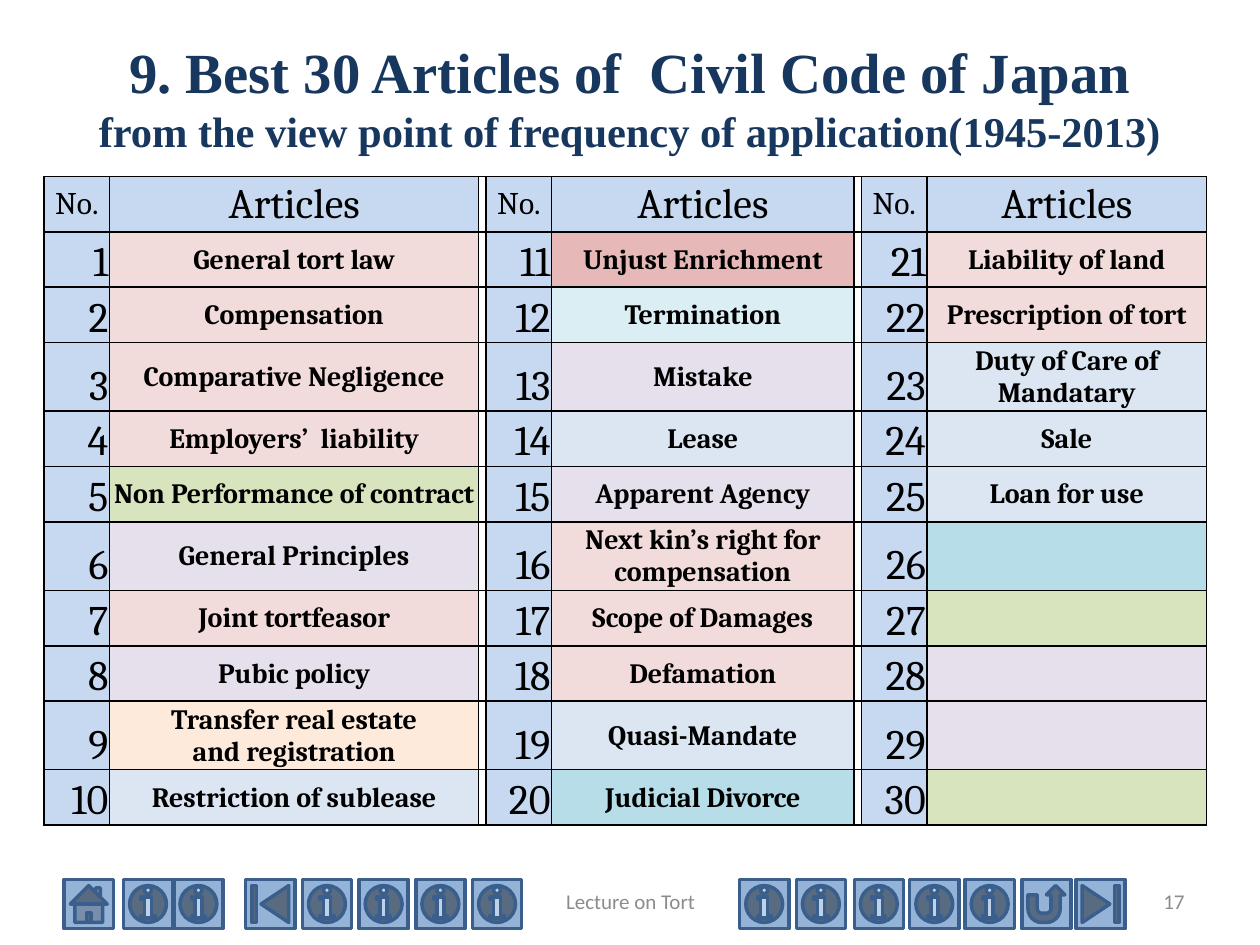
from lxml import etree
from pptx import Presentation
from pptx.dml.color import RGBColor
from pptx.enum.shapes import MSO_SHAPE
from pptx.enum.text import MSO_ANCHOR, PP_ALIGN
from pptx.oxml.ns import qn
from pptx.util import Inches, Pt

LEFT, CENTER, RIGHT = PP_ALIGN.LEFT, PP_ALIGN.CENTER, PP_ALIGN.RIGHT
MIDDLE, BOTTOM = MSO_ANCHOR.MIDDLE, MSO_ANCHOR.BOTTOM
HOME = MSO_SHAPE.ACTION_BUTTON_HOME
FIRST = MSO_SHAPE.ACTION_BUTTON_BEGINNING
LAST = MSO_SHAPE.ACTION_BUTTON_END
BACK = MSO_SHAPE.ACTION_BUTTON_RETURN
INFO = MSO_SHAPE.ACTION_BUTTON_INFORMATION

COLORS = {
    "title": "17375E", "text": "000000", "footer": "8C8C8C",
    "button": "95B3D7", "button line": "3A5F8C", "number": "C6D9F1",
    "tort": "F2DCDB", "enrichment": "E6B9B8", "obligation": "D7E4BD",
    "general": "E6E0EC", "property": "FDEADA", "contract": "DCE6F2",
    "termination": "DBEEF4", "family": "B7DEE8",
}

ARTICLES = [
    ("General tort law", "tort"),
    ("Compensation", "tort"),
    ("Comparative Negligence", "tort"),
    ("Employers’  liability", "tort"),
    ("Non Performance of contract", "obligation"),
    ("General Principles", "general"),
    ("Joint tortfeasor", "tort"),
    ("Pubic policy", "general"),
    ("Transfer real estate\nand registration", "property"),
    ("Restriction of sublease", "contract"),
    ("Unjust Enrichment", "enrichment"),
    ("Termination", "termination"),
    ("Mistake", "general"),
    ("Lease", "contract"),
    ("Apparent Agency", "general"),
    ("Next kin’s right for compensation", "tort"),
    ("Scope of Damages", "tort"),
    ("Defamation", "tort"),
    ("Quasi-Mandate", "contract"),
    ("Judicial Divorce", "family"),
    ("Liability of land", "tort"),
    ("Prescription of tort", "tort"),
    ("Duty of Care of Mandatary", "contract"),
    ("Sale", "contract"),
    ("Loan for use", "contract"),
    ("", "family"),
    ("", "obligation"),
    ("", "general"),
    ("", "general"),
    ("", "obligation"),
]
ROWS_PER_GROUP = 10
ROW_HEIGHT = 0.44
COLUMN_WIDTHS = [0.52, 2.93, 0.05, 0.52, 2.4, 0.05, 0.52, 2.22]

BUTTONS = [
    (HOME, 0.51), (INFO, 0.98), (INFO, 1.38), (FIRST, 1.95), (INFO, 2.4),
    (INFO, 2.85), (INFO, 3.3), (INFO, 3.75), (INFO, 5.87), (INFO, 6.32),
    (INFO, 6.78), (INFO, 7.22), (INFO, 7.66), (BACK, 8.11), (LAST, 8.54),
]


def rgb(name):
    return RGBColor.from_string(COLORS[name])


def write(frame, text, size, font="Cambria", color="text", bold=False, align=CENTER):
    """Append text to the first paragraph; a newline becomes a line break."""
    paragraph = frame.paragraphs[0]
    paragraph.alignment = align
    for index, line in enumerate(text.split("\n")):
        if index:
            paragraph.add_line_break()
        if line:
            run = paragraph.add_run()
            run.text = line
            run.font.size = Pt(size)
            run.font.name = font
            run.font.bold = bold
            run.font.color.rgb = rgb(color)


def add_text_area(slide, left, top, width, height):
    area = slide.shapes.add_textbox(Inches(left), Inches(top), Inches(width), Inches(height))
    frame = area.text_frame
    frame.word_wrap = True
    frame.vertical_anchor = MIDDLE
    return frame


def add_button(slide, kind, left):
    button = slide.shapes.add_shape(kind, Inches(left), Inches(6.98), Inches(0.39), Inches(0.39))
    button.shadow.inherit = False
    button.fill.solid()
    button.fill.fore_color.rgb = rgb("button")
    button.line.color.rgb = rgb("button line")
    button.line.width = Pt(2)


def set_borders(cell):
    properties = cell._tc.get_or_add_tcPr()
    for position, side in enumerate(("a:lnL", "a:lnR", "a:lnT", "a:lnB")):
        line = etree.Element(qn(side), w=str(Pt(1)))
        fill = etree.SubElement(line, qn("a:solidFill"))
        etree.SubElement(fill, qn("a:srgbClr"), val=COLORS["text"])
        properties.insert(position, line)


def fill_cell(cell, text, fill, size, anchor=MIDDLE, **text_format):
    cell.fill.solid()
    cell.fill.fore_color.rgb = rgb(fill)
    cell.vertical_anchor = anchor
    write(cell.text_frame, text, size, **text_format)


def add_article_table(slide):
    row_count = ROWS_PER_GROUP + 1
    table = slide.shapes.add_table(
        row_count, len(COLUMN_WIDTHS), Inches(0.35), Inches(1.4),
        Inches(sum(COLUMN_WIDTHS)), Inches(ROW_HEIGHT * row_count)).table
    table.first_row = table.horz_banding = False
    for column, width in zip(table.columns, COLUMN_WIDTHS):
        column.width = Inches(width)
    for row in table.rows:
        row.height = Inches(ROW_HEIGHT)
    for cell in table.iter_cells():
        cell.margin_left = cell.margin_right = cell.margin_top = Inches(0.01)
        cell.margin_bottom = 0
        cell.fill.background()
        set_borders(cell)

    for number_column in range(0, len(COLUMN_WIDTHS), 3):
        fill_cell(table.cell(0, number_column), "No.", "number", 18)
        fill_cell(table.cell(0, number_column + 1), "Articles", "number", 24)
    for index, (article, field) in enumerate(ARTICLES):
        group, row = divmod(index, ROWS_PER_GROUP)
        fill_cell(table.cell(row + 1, group * 3), str(index + 1), "number", 24,
                  anchor=BOTTOM, align=RIGHT)
        fill_cell(table.cell(row + 1, group * 3 + 1), article, field, 16, bold=True)


def main():
    presentation = Presentation()
    presentation.slide_width, presentation.slide_height = Inches(10), Inches(7.5)
    slide = presentation.slides.add_slide(presentation.slide_layouts[6])

    for kind, left in BUTTONS:
        add_button(slide, kind, left)

    heading = {"font": "Times New Roman", "color": "title", "bold": True}
    title = add_text_area(slide, 0.5, 0.3, 9, 0.93)
    write(title, "9. Best 30 Articles of  Civil Code of Japan\n", 32.4, **heading)
    write(title, "from the view point of frequency of application(1945-2013)", 24.3, **heading)

    add_article_table(slide)

    footer = {"size": 12, "font": "Calibri", "color": "footer"}
    write(add_text_area(slide, 7.17, 6.95, 2.33, 0.4), "17", align=RIGHT, **footer)
    write(add_text_area(slide, 3.42, 6.95, 3.17, 0.4), "Lecture on Tort", **footer)
    presentation.save("out.pptx")


if __name__ == "__main__":
    main()
